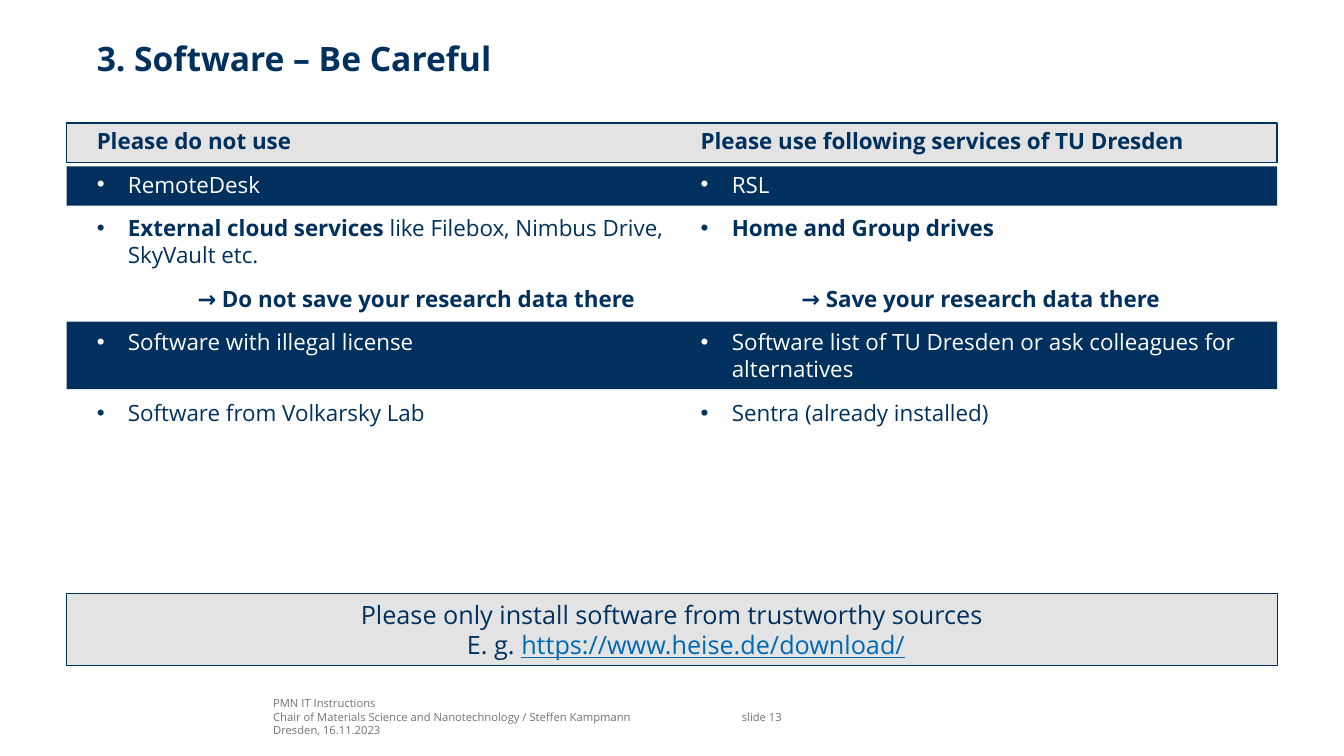
"""Build the slide that sets software to avoid beside recommended services."""
from lxml.etree import SubElement
from pptx import Presentation
from pptx.dml.color import RGBColor
from pptx.enum.shapes import MSO_SHAPE
from pptx.enum.text import MSO_ANCHOR, MSO_AUTO_SIZE, PP_ALIGN
from pptx.oxml.ns import qn
from pptx.util import Inches, Pt

NAVY = RGBColor(0x00, 0x30, 0x5D)
LINK_BLUE = RGBColor(0x00, 0x69, 0xB4)
PALE_GREY = RGBColor(0xE3, 0xE3, 0xE4)
FOOTER_GREY = RGBColor(0x72, 0x72, 0x77)
WHITE = RGBColor(0xFF, 0xFF, 0xFF)

BAND_LEFT, BAND_WIDTH = Inches(0.66), Inches(12.01)
TEXT_LEFT, BODY_TOP, BODY_HEIGHT = Inches(0.96), Inches(1.26), Inches(4.75)
HANG = Inches(0.31)
GAP = 12
EXTRA_LINE = 19.2


def write(frame, runs, size=16, color=NAVY, bold=False, underline=False, bullet=False,
          indent=0, before=0, align=PP_ALIGN.LEFT):
    """Add one paragraph of (text, changes) runs to a text frame."""
    last = frame.paragraphs[-1]
    paragraph = frame.add_paragraph() if last.runs else last
    properties = paragraph._p.get_or_add_pPr()
    properties.set("marL", str(HANG if bullet else indent))
    properties.set("indent", str(-HANG if bullet else 0))
    if bullet:
        SubElement(properties, qn("a:buFont")).set("typeface", "Arial")
        SubElement(properties, qn("a:buChar")).set("char", "•")
    else:
        SubElement(properties, qn("a:buNone"))
    paragraph.alignment = align
    paragraph.line_spacing = 1.0
    paragraph.space_before = Pt(before)
    for text, changes in runs:
        look = {"color": color, "bold": bold, "underline": underline} | changes
        run = paragraph.add_run()
        run.text = text
        run.font.name = "Open Sans"
        run.font.size = Pt(size)
        run.font.color.rgb = look["color"]
        run.font.bold = look["bold"]
        run.font.underline = look["underline"]


def prepare(shape, left, top, width, height, anchor=MSO_ANCHOR.TOP):
    """Place a text shape without margins and return its text frame."""
    shape.left, shape.top, shape.width, shape.height = left, top, width, height
    frame = shape.text_frame
    frame.margin_left = frame.margin_right = frame.margin_top = frame.margin_bottom = 0
    frame.auto_size = MSO_AUTO_SIZE.NONE
    frame.word_wrap = True
    frame.vertical_anchor = anchor
    return frame


deck = Presentation()
deck.slide_width, deck.slide_height = Inches(13.333), Inches(7.5)
slide = deck.slides.add_slide(deck.slide_layouts[3])
title, avoid, prefer = slide.placeholders

heading = prepare(title, TEXT_LEFT, Inches(0.38), Inches(11.57), Inches(0.75))
write(heading, [("3. Software – Be Careful", {})], size=24, bold=True)

bands = []
for top, height, fill, border in [
    (1.65, 0.39, NAVY, None),
    (3.19, 0.67, NAVY, None),
    (1.22, 0.39, PALE_GREY, 1),
    (5.89, 0.71, PALE_GREY, 0.75),
]:
    band = slide.shapes.add_shape(
        MSO_SHAPE.RECTANGLE, BAND_LEFT, Inches(top), BAND_WIDTH, Inches(height))
    band.shadow.inherit = False
    band.fill.solid()
    band.fill.fore_color.rgb = fill
    if border:
        band.line.color.rgb = NAVY
        band.line.width = Pt(border)
    else:
        band.line.fill.background()
    bands.append(band)

for column in (avoid, prefer):
    slide.shapes._spTree.append(column._element)

ARROW = {"bold": True, "indent": Inches(1)}
POINT = {"bullet": True}
LIGHT_POINT = {"bullet": True, "color": WHITE}
columns = [
    (avoid, TEXT_LEFT, [
        ([("Please do not use", {})], {"bold": True, "before": 0}),
        ([("RemoteDesk", {})], LIGHT_POINT),
        ([("External cloud services ", {"bold": True}),
          ("like Filebox, Nimbus Drive, SkyVault etc.", {})], POINT),
        ([("→ Do not save your research data there", {})], ARROW),
        ([("Software with illegal license", {})], LIGHT_POINT),
        ([("Software from Volkarsky Lab", {})], POINT | {"before": GAP + EXTRA_LINE}),
    ]),
    (prefer, Inches(6.95), [
        ([("Please use following services of TU Dresden", {})], {"bold": True, "before": 0}),
        ([("RSL", {})], LIGHT_POINT),
        ([("Home and Group drives", {})], POINT | {"bold": True}),
        ([("→ Save your research data there", {})], ARROW | {"before": GAP + EXTRA_LINE}),
        ([("Software list of TU Dresden or ask colleagues for alternatives", {})], LIGHT_POINT),
        ([("Sentra (already installed)", {})], POINT),
    ]),
]
for column, left, entries in columns:
    frame = prepare(column, left, BODY_TOP, Inches(5.71), BODY_HEIGHT)
    for runs, look in entries:
        write(frame, runs, **({"before": GAP} | look))

advice = bands[-1].text_frame
advice.word_wrap = True
advice.vertical_anchor = MSO_ANCHOR.MIDDLE
write(advice, [("Please only install software from trustworthy sources", {})],
      size=18, align=PP_ALIGN.CENTER)
write(advice, [("E. g. ", {}),
               ("https://www.heise.de/download/", {"color": LINK_BLUE, "underline": True})],
      size=18, align=PP_ALIGN.CENTER, indent=Inches(0.28))

for left, width, anchor, lines in [
    (2.71, 4.5, MSO_ANCHOR.BOTTOM, [
        "PMN IT Instructions",
        "Chair of Materials Science and Nanotechnology / Steffen Kampmann",
        "Dresden, 16.11.2023",
    ]),
    (7.36, 0.77, MSO_ANCHOR.MIDDLE, ["slide 13"]),
]:
    place = Inches(left), Inches(6.91), Inches(width), Inches(0.4)
    footer = prepare(slide.shapes.add_textbox(*place), *place, anchor=anchor)
    for line in lines:
        write(footer, [(line, {})], size=8, color=FOOTER_GREY)

deck.save("out.pptx")
